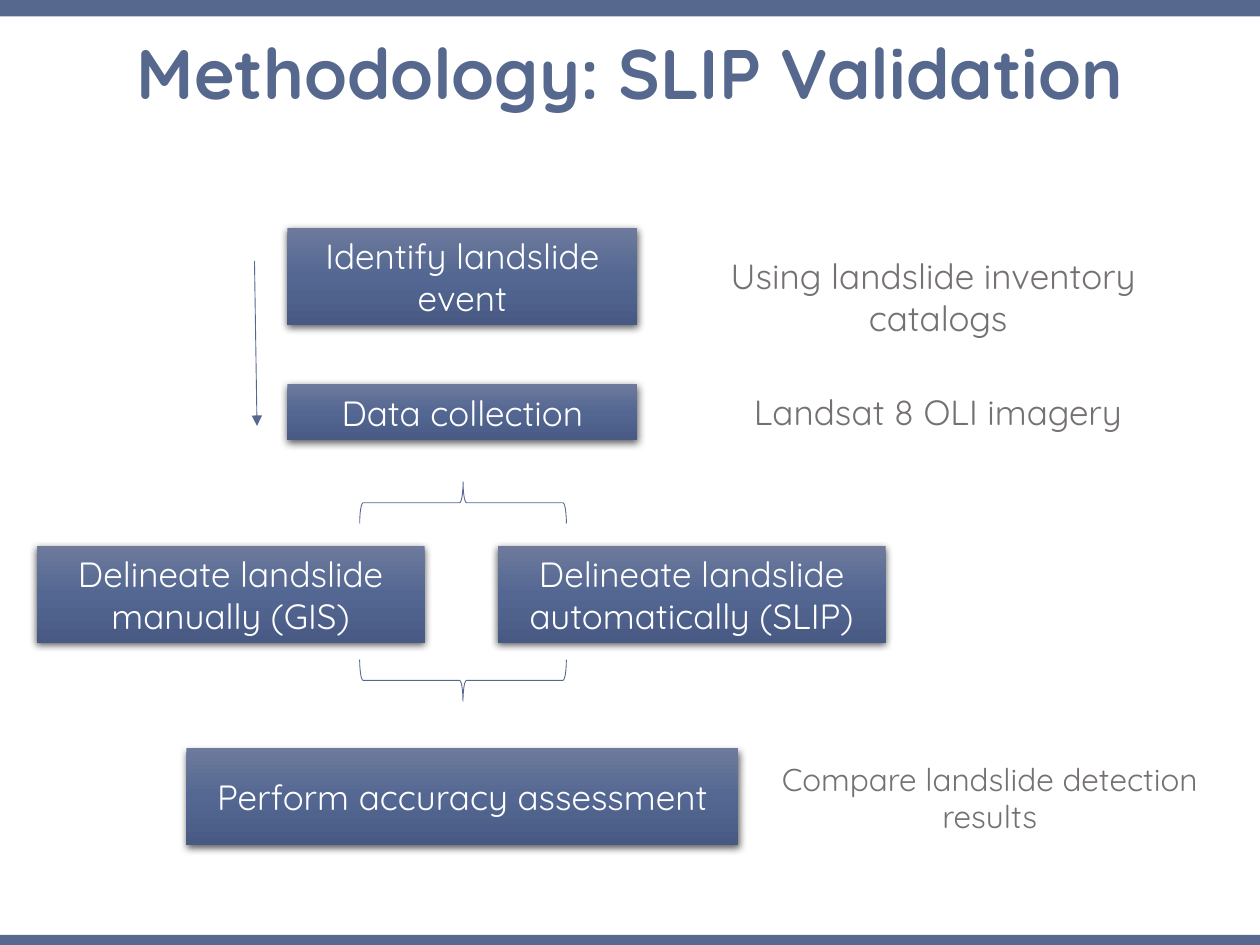
from copy import deepcopy
from typing import NamedTuple

from lxml import etree
from pptx import Presentation
from pptx.dml.color import RGBColor
from pptx.enum import shapes, text
from pptx.oxml import ns, parse_xml
from pptx.util import Inches, Pt

FONT = "Quicksand"
BLUE, GRAY, WHITE = "57688F", "767171", "FFFFFF"
GRADIENT = ((0, "6D7A9C"), (0.5, "546792"), (1, "485A84"))
SHADOW = (
    f'<a:outerShdw {ns.nsdecls("a")} blurRad="57150" dist="19050" dir="5400000" '
    'algn="ctr" rotWithShape="0"><a:srgbClr val="000000"><a:alpha val="63000"/>'
    "</a:srgbClr></a:outerShdw>"
)


class Box(NamedTuple):
    left: float
    top: float
    width: float
    height: float


class Label(NamedTuple):
    wording: str
    box: Box
    size: int = 20


BARS = (Box(0, 0, 10, 0.13), Box(0, 7.42, 10, 0.08))
TITLE = Label("Methodology: SLIP Validation", Box(0, 0.03, 10, 0.93), 40)
STEPS = (
    Label("Identify landslide event", Box(2.28, 1.81, 2.78, 0.77)),
    Label("Data collection", Box(2.28, 3.05, 2.78, 0.44)),
    Label("Delineate landslide automatically (SLIP)", Box(3.95, 4.33, 3.08, 0.77)),
    Label("Delineate landslide manually (GIS)", Box(0.29, 4.33, 3.08, 0.77)),
    Label("Perform accuracy assessment", Box(1.48, 5.94, 4.38, 0.77)),
)
BRACES = ((Box(3.51, 3.17, 0.33, 1.64), 90), (Box(3.51, 4.58, 0.33, 1.64), 270))
NOTES = (
    Label("Using landslide inventory \ncatalogs", Box(5.06, 1.97, 4.77, 0.77)),
    Label("Landsat 8 OLI imagery", Box(5.06, 3.05, 4.77, 0.44)),
    Label("Compare landslide detection results", Box(6.09, 5.98, 3.53, 0.71), 18),
)


def color(value: str) -> RGBColor:
    return RGBColor.from_string(value)


def place(box: Box) -> list:
    return [Inches(length) for length in box]


def write(shape, label: Label, ink: str, anchor, bold: bool = False) -> None:
    frame = shape.text_frame
    frame.word_wrap = True
    frame.vertical_anchor = anchor
    frame.text = label.wording
    for paragraph in frame.paragraphs:
        paragraph.alignment = text.PP_ALIGN.CENTER
        for run in paragraph.runs:
            run.font.name = FONT
            run.font.size = Pt(label.size)
            run.font.bold = bold
            run.font.color.rgb = color(ink)


def add_bar(slide, box: Box) -> None:
    bar = slide.shapes.add_shape(shapes.MSO_SHAPE.RECTANGLE, *place(box))
    bar.shadow.inherit = False
    bar.fill.solid()
    bar.fill.fore_color.rgb = color(BLUE)
    bar.line.fill.background()


def add_text(slide, label: Label, ink: str, anchor=text.MSO_ANCHOR.TOP, bold: bool = False):
    shape = slide.shapes.add_textbox(*place(label.box))
    write(shape, label, ink, anchor, bold)
    return shape


def add_step(slide, label: Label) -> None:
    """Add a box with a vertical three-stop gradient and a soft shadow."""
    shape = slide.shapes.add_shape(shapes.MSO_SHAPE.RECTANGLE, *place(label.box))
    shape.line.fill.background()
    shape.fill.gradient()
    shape.fill.gradient_angle = 270
    properties = shape.element.spPr
    stop_list = properties.find(".//" + ns.qn("a:gsLst"))
    stop_list.append(deepcopy(stop_list[0]))
    for stop, (position, value) in zip(shape.fill.gradient_stops, GRADIENT):
        stop.position = position
        stop.color.rgb = color(value)
    shape.shadow.inherit = False
    properties.find(ns.qn("a:effectLst")).append(parse_xml(SHADOW))
    write(shape, label, WHITE, text.MSO_ANCHOR.MIDDLE)


def add_brace(slide, box: Box, rotation: int) -> None:
    brace = slide.shapes.add_shape(shapes.MSO_SHAPE.LEFT_BRACE, *place(box))
    brace.rotation = rotation
    brace.shadow.inherit = False
    brace.fill.background()
    brace.line.color.rgb = color(BLUE)
    brace.line.width = Pt(0.5)


def add_arrow(slide, left: float, top: float, right: float, bottom: float) -> None:
    ends = [Inches(length) for length in (left, top, right, bottom)]
    arrow = slide.shapes.add_connector(shapes.MSO_CONNECTOR.STRAIGHT, *ends)
    arrow.line.color.rgb = color(BLUE)
    arrow.line.width = Pt(0.5)
    etree.SubElement(arrow.line._get_or_add_ln(), ns.qn("a:tailEnd"), type="triangle")
    etree.SubElement(arrow.element.spPr, ns.qn("a:effectLst"))


def main() -> None:
    presentation = Presentation()
    presentation.slide_width, presentation.slide_height = Inches(10), Inches(7.5)
    slide = presentation.slides.add_slide(presentation.slide_layouts[6])

    for bar in BARS:
        add_bar(slide, bar)
    title = add_text(slide, TITLE, BLUE, text.MSO_ANCHOR.BOTTOM, bold=True)
    title.text_frame.paragraphs[0].line_spacing = 0.9
    for step in STEPS:
        add_step(slide, step)
    for box, rotation in BRACES:
        add_brace(slide, box, rotation)
    add_arrow(slide, 2.02, 2.07, 2.04, 3.38)
    for note in NOTES:
        add_text(slide, note, GRAY)

    presentation.save("out.pptx")


if __name__ == "__main__":
    main()
